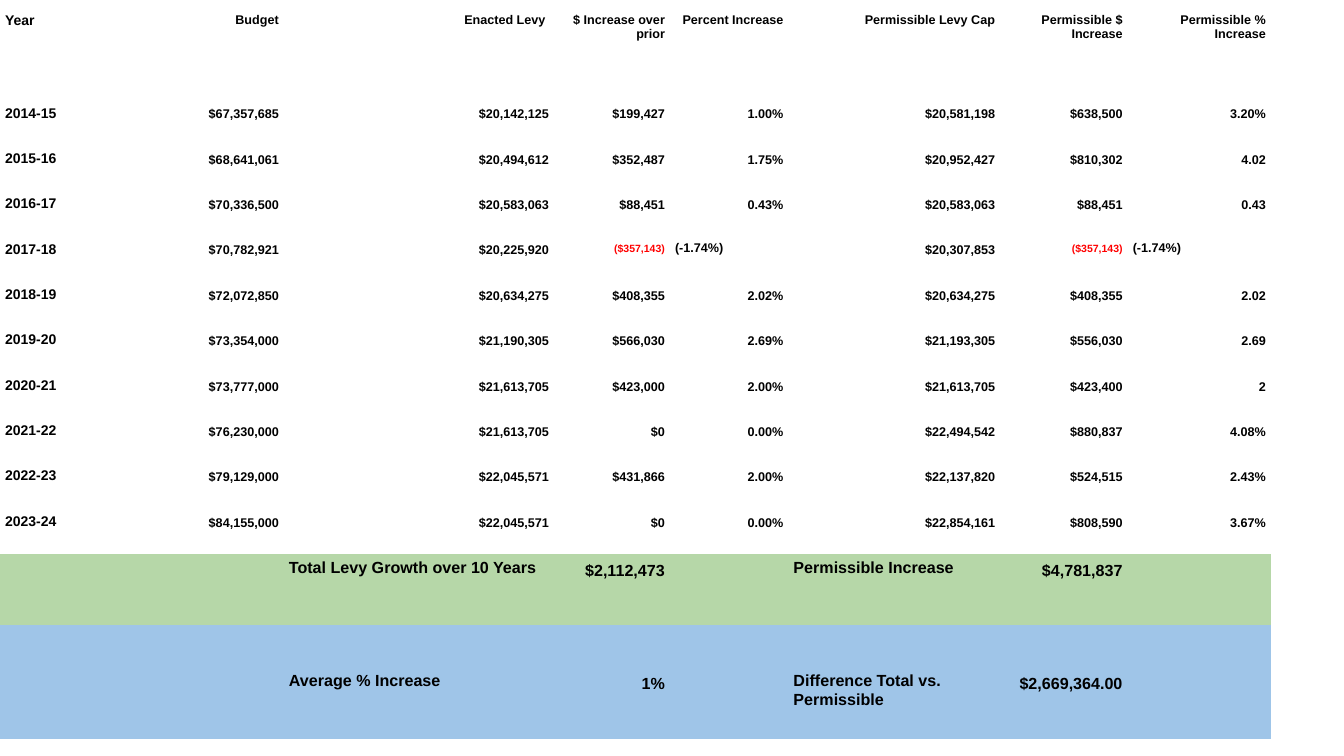
from pptx import Presentation
from pptx.dml.color import RGBColor
from pptx.enum.text import PP_ALIGN as Align
from pptx.util import Pt

BLACK, RED, GREEN, BLUE = "000000", "FF0000", "B6D7A8", "9FC5E8"
PLAIN_STYLE = "{2D5ABB26-0587-4C30-8999-92F81FD0307C}"
INSET = 7.2
COLUMN_WIDTHS = [192.2, 213.2, 385.9, 165.6, 169.2, 302.4, 182.2, 204.5]
HEADER_HEIGHTS = [72.7, 59]
YEAR_HEIGHT = 64.8
SUMMARY_HEIGHTS = [102.2, 59.8, 102.2]

HEADERS = ["Year", "Budget", "Enacted Levy ", "$ Increase over prior", "Percent Increase",
           "Permissible Levy Cap", "Permissible $ Increase", "Permissible % Increase"]
UNMERGED_HEADER = 2
YEARS = [
    ["2014-15", "$67,357,685", "$20,142,125", "$199,427", "1.00%", "$20,581,198", "$638,500", "3.20%"],
    ["2015-16", "$68,641,061", "$20,494,612", "$352,487", "1.75%", "$20,952,427", "$810,302", "4.02"],
    ["2016-17", "$70,336,500", "$20,583,063", "$88,451", "0.43%", "$20,583,063", "$88,451", "0.43"],
    ["2017-18", "$70,782,921", "$20,225,920", "($357,143)", "(-1.74%)", "$20,307,853", "($357,143)", "(-1.74%)"],
    ["2018-19", "$72,072,850", "$20,634,275", "$408,355", "2.02%", "$20,634,275", "$408,355", "2.02"],
    ["2019-20", "$73,354,000", "$21,190,305", "$566,030", "2.69%", "$21,193,305", "$556,030", "2.69"],
    ["2020-21", "$73,777,000", "$21,613,705", "$423,000", "2.00%", "$21,613,705", "$423,400", "2"],
    ["2021-22", "$76,230,000", "$21,613,705", "$0", "0.00%", "$22,494,542", "$880,837", "4.08%"],
    ["2022-23", "$79,129,000", "$22,045,571", "$431,866", "2.00%", "$22,137,820", "$524,515", "2.43%"],
    ["2023-24", "$84,155,000", "$22,045,571", "$0", "0.00%", "$22,854,161", "$808,590", "3.67%"],
]
# Each summary row: fill, then text by column
SUMMARY = [
    (GREEN, {2: "Total Levy Growth over 10 Years", 3: "$2,112,473",
             5: "Permissible Increase", 6: "$4,781,837"}),
    (BLUE, {}),
    (BLUE, {2: "Average % Increase", 3: "1%",
            5: "Difference Total vs. Permissible", 6: "$2,669,364.00"}),
]


def color(value):
    return RGBColor.from_string(value)


def write_cell(cell, text, size, align=Align.LEFT, spacing=None, ink=BLACK):
    cell.margin_left = cell.margin_right = Pt(INSET)
    cell.margin_top = cell.margin_bottom = Pt(INSET)
    para = cell.text_frame.paragraphs[0]
    para.text = text
    para.alignment = align
    if spacing:
        para.line_spacing = spacing
    font = para.runs[0].font
    font.name, font.size, font.bold = "Arial", Pt(size), True
    font.color.rgb = color(ink)


def fill_header(table):
    for column, text in enumerate(HEADERS):
        cell = table.cell(0, column)
        if column != UNMERGED_HEADER:
            cell.merge(table.cell(1, column))
        if column == 0:
            write_cell(cell, text, 20)
        else:
            write_cell(cell, text, 18, Align.RIGHT)


def fill_years(table, first_row):
    for row, values in enumerate(YEARS, first_row):
        for column, text in enumerate(values):
            cell = table.cell(row, column)
            if column == 0:
                write_cell(cell, text, 20)
            elif text.startswith("(-"):
                write_cell(cell, text, 18)
            elif text.startswith("($"):
                write_cell(cell, text, 15, Align.RIGHT, 1.15, RED)
            else:
                write_cell(cell, text, 18, Align.RIGHT, 1.15)


def fill_summary(table, first_row):
    for row, (shade, texts) in enumerate(SUMMARY, first_row):
        for column in range(len(COLUMN_WIDTHS)):
            cell = table.cell(row, column)
            cell.fill.solid()
            cell.fill.fore_color.rgb = color(shade)
            text = texts.get(column)
            if text and text[0].isalpha():
                write_cell(cell, text, 23)
            elif text:
                write_cell(cell, text, 23, Align.RIGHT, 1.15)


def add_levy_table(page, left, top):
    heights = HEADER_HEIGHTS + [YEAR_HEIGHT] * len(YEARS) + SUMMARY_HEIGHTS
    frame = page.shapes.add_table(len(heights), len(COLUMN_WIDTHS), Pt(left), Pt(top),
                                  Pt(sum(COLUMN_WIDTHS)), Pt(sum(heights)))
    table = frame.table
    table.first_row = table.horz_banding = False
    table._tbl.tblPr[0].text = PLAIN_STYLE
    for column, width in zip(table.columns, COLUMN_WIDTHS):
        column.width = Pt(width)
    for row, height in zip(table.rows, heights):
        row.height = Pt(height)
    for cell in table.iter_cells():
        cell.fill.background()
    first_year = len(HEADER_HEIGHTS)
    fill_header(table)
    fill_years(table, first_year)
    fill_summary(table, first_year + len(YEARS))


def main():
    deck = Presentation()
    deck.slide_width, deck.slide_height = Pt(1919.52), Pt(1080)
    page = deck.slides.add_slide(deck.slide_layouts[6])
    add_levy_table(page, 0, 11.6)
    deck.save("out.pptx")


if __name__ == "__main__":
    main()
